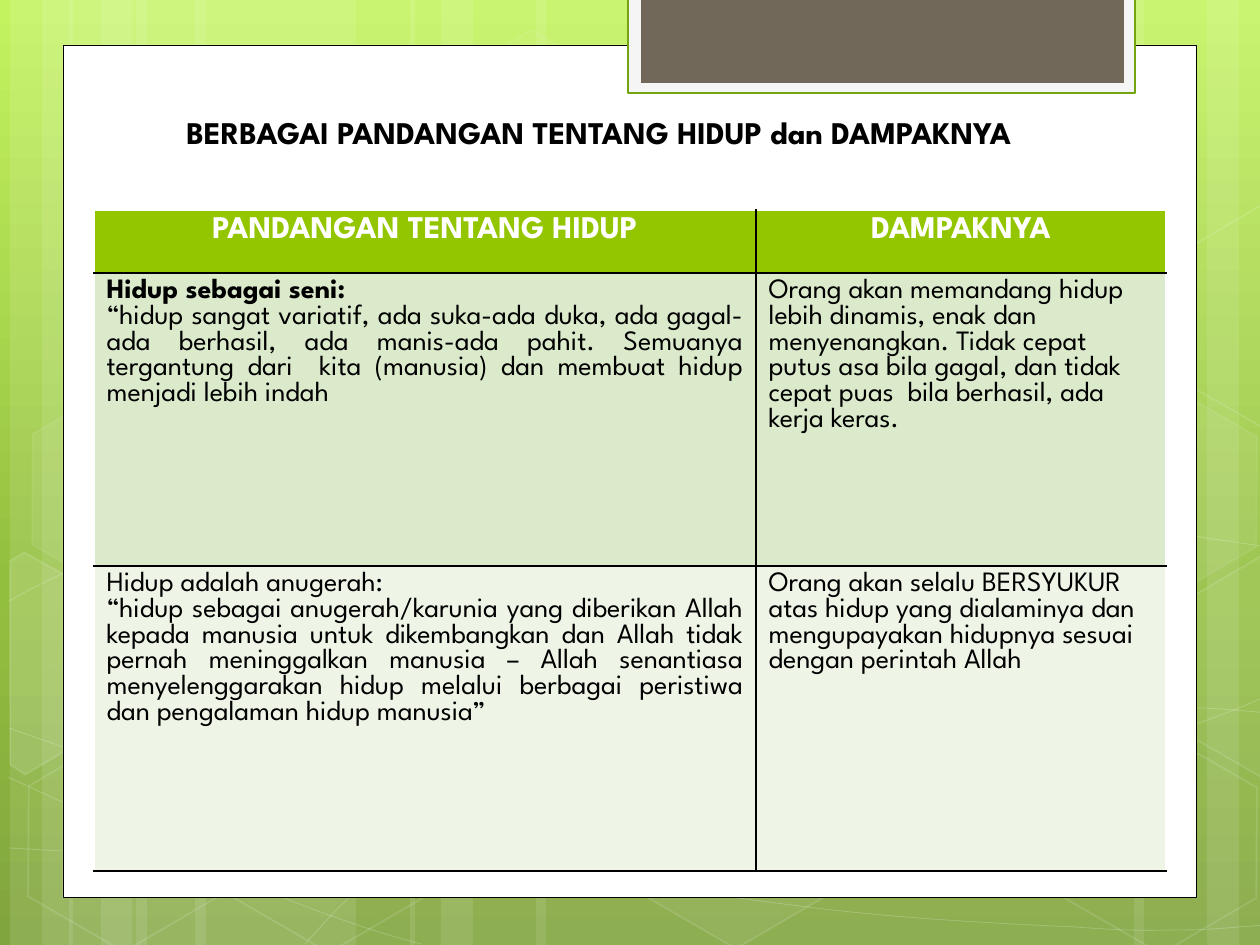
from copy import deepcopy
from math import cos, radians, sin
from pptx import Presentation
from pptx.dml.color import RGBColor
from pptx.enum.shapes import MSO_SHAPE
from pptx.enum.text import PP_ALIGN
from pptx.oxml import parse_xml
from pptx.oxml.ns import nsdecls, qn
from pptx.util import Pt

SCALE = 914400 / 126
FONT = "League Spartan"
TILT = 30
WHITE = RGBColor(0xFF, 0xFF, 0xFF)
BLACK = RGBColor(0, 0, 0)
LIME = RGBColor(0x94, 0xC6, 0x00)
MINT = RGBColor(0xDC, 0xEA, 0xCC)
PALE = RGBColor(0xEE, 0xF5, 0xE7)
SMOKE = RGBColor(0xF5, 0xF5, 0xF5)
OLIVE = RGBColor(0x74, 0xA5, 0x10)
TAUPE = RGBColor(0x71, 0x68, 0x5A)
STOPS = [
    (0, RGBColor(0xC3, 0xF3, 0x5F)),
    (0.62, RGBColor(0x93, 0xBF, 0x3F)),
    (1, RGBColor(0x81, 0xA5, 0x3E)),
]
BARS = [
    (136, 220), (10, 63), (42, 105), (195, 220), (69, 63), (101, 105),
    (924, 220), (1207, 63), (1134, 105), (536, 388), (410, 63), (441, 105),
]
CURVES = [
    [(9, 848), (77, 852), (145, 856), (239, 854), (334, 853), (451, 851), (577, 838),
     (703, 825), (882, 801), (998, 777), (1113, 753), (1231, 716), (1269, 694)],
    [(9, 601), (45, 581), (82, 562), (152, 543), (224, 524), (326, 496), (437, 488),
     (549, 479), (685, 478), (824, 488), (963, 498), (1193, 537), (1269, 547)],
    [(8, 777), (160, 847), (311, 916), (421, 944)],
    [(9, 728), (48, 742), (88, 756), (161, 776), (234, 795), (344, 827), (450, 848),
     (554, 869), (687, 892), (791, 905), (896, 919), (1008, 924), (1075, 927),
     (1140, 932), (1158, 930), (1191, 930), (1223, 929), (1246, 926), (1269, 925)],
    [(305, 944), (328, 919), (350, 893), (381, 871), (411, 848), (454, 823), (489, 805),
     (524, 788), (546, 780), (592, 767), (638, 754), (722, 737), (766, 728),
     (811, 720), (818, 720), (857, 717), (896, 713), (958, 709), (1000, 708),
     (1045, 707), (1116, 708), (1116, 708), (1144, 708), (1173, 708), (1201, 708),
     (1223, 709), (1245, 711), (1256, 712), (1268, 713), (1264, 712), (1268, 713)],
]
HEXES = [
    (421, 45, 4, 8), (626, 742, 6, 12), (14, 745, 0, 12), (18, 393, 7, 8),
    (219, 746, 0, 12), (1051, 747, 0, 12), (1051, 396, 7, 8),
]
SHARDS = [
    ([(10, 561), (24, 552), (121, 607), (120, 718), (25, 774), (10, 765)], (45, 674), 10),
    ([(1167, 611), (1261, 556), (1271, 562), (1271, 772), (1263, 777), (1167, 722)],
     (1241, 655), 4),
    ([(1167, 261), (1261, 205), (1273, 212), (1271, 422), (1263, 427), (1167, 372)],
     (1241, 304), 0),
]
ROWS = [
    [["PANDANGAN TENTANG HIDUP"], ["DAMPAKNYA"]],
    [["Hidup sebagai seni:",
      "“hidup sangat variatif, ada suka-ada duka, ada gagal-ada berhasil, ada manis-ada "
      "pahit. Semuanya tergantung dari  kita (manusia) dan membuat hidup menjadi lebih indah"],
     ["Orang akan memandang hidup lebih dinamis, enak dan menyenangkan. Tidak cepat putus "
      "asa bila gagal, dan tidak cepat puas  bila berhasil, ada kerja keras."]],
    [["Hidup adalah anugerah:",
      "“hidup sebagai anugerah/karunia yang diberikan Allah kepada manusia untuk "
      "dikembangkan dan Allah tidak pernah meninggalkan manusia – Allah senantiasa "
      "menyelenggarakan hidup melalui berbagai peristiwa dan pengalaman hidup manusia”"],
     ["Orang akan selalu BERSYUKUR atas hidup yang dialaminya dan mengupayakan hidupnya "
      "sesuai dengan perintah Allah"]],
]


def px(*nums):
    """Turn pixel lengths into EMU."""
    return [round(num * SCALE) for num in nums]


def fade(fill, shade):
    """Set the opacity of a solid fill element in percent."""
    fill[0].append(parse_xml(f'<a:alpha {nsdecls("a")} val="{shade * 1000}"/>'))


def paint(shape, fill=None, line=None, width=1, shade=100, edge=100):
    """Set fill, line and opacity of a shape."""
    shape.shadow.inherit = False
    props = shape.element.spPr
    if fill is None:
        shape.fill.background()
    else:
        shape.fill.solid()
        shape.fill.fore_color.rgb = fill
        if shade < 100:
            fade(props.find(qn("a:solidFill")), shade)
    if line is None:
        shape.line.fill.background()
    else:
        shape.line.color.rgb = line
        shape.line.width = Pt(width)
        if edge < 100:
            fade(props.find(qn("a:ln")).find(qn("a:solidFill")), edge)


def add_box(shapes, box, kind=MSO_SHAPE.RECTANGLE, **look):
    """Add a painted preset shape."""
    shape = shapes.add_shape(kind, *px(*box))
    paint(shape, **look)
    return shape


def add_path(shapes, points, close, **look):
    """Add a painted outline through the points."""
    pen = shapes.build_freeform(*points[0], scale=SCALE)
    pen.add_line_segments(points[1:], close=close)
    shape = pen.convert_to_shape()
    paint(shape, **look)
    return shape


def add_curve(shapes, knots):
    """Add a faint line of cubic curves."""
    shape = add_path(shapes, knots, False, line=WHITE, width=0.5, edge=20)
    legs = list(shape.element.iter(qn("a:lnTo")))
    for start in range(0, len(legs), 3):
        bend = parse_xml(f'<a:cubicBezTo {nsdecls("a")}/>')
        legs[start].addprevious(bend)
        for leg in legs[start:start + 3]:
            bend.append(leg[0])
            leg.getparent().remove(leg)


def add_shard(shapes, points, hub, shade):
    """Add a cut hexagon that is tilted about its hub."""
    c, s = cos(radians(TILT)), sin(radians(TILT))
    flat = [(hub[0] + (x - hub[0]) * c + (y - hub[1]) * s,
             hub[1] - (x - hub[0]) * s + (y - hub[1]) * c) for x, y in points]
    shape = add_path(shapes, flat, True, fill=WHITE if shade else None, shade=shade,
                     line=WHITE, edge=12)
    shape.rotation = TILT


def set_ground(slide):
    """Fill the background with the green gradient."""
    fill = slide.background.fill
    fill.gradient()
    fill.gradient_angle = 270
    stops = next(slide.element.iter(qn("a:gsLst")))
    stops.append(deepcopy(stops[0]))
    for stop, (place, color) in zip(fill.gradient_stops, STOPS):
        stop.position = place
        stop.color.rgb = color


def add_decor(shapes):
    """Draw the bars, curves and hexagons."""
    for left, width in BARS:
        add_box(shapes, (left, 0, width, 945), fill=WHITE, shade=10)
    for knots in CURVES:
        add_curve(shapes, knots)
    for left, top, shade, edge in HEXES:
        hexa = add_box(shapes, (left, top, 220, 192), MSO_SHAPE.HEXAGON,
                       fill=WHITE if shade else None, shade=shade, line=WHITE, edge=edge)
        hexa.adjustments[0] = 0.285
        hexa.rotation = TILT
    for shard in SHARDS:
        add_shard(shapes, *shard)


def write(frame, lines, size, color, align, bold=0):
    """Write the lines as paragraphs, the first few in bold."""
    for index, line in enumerate(lines):
        para = frame.add_paragraph() if index else frame.paragraphs[0]
        para.text = line
        para.alignment = align
        font = para.font
        font.name, font.size, font.bold = FONT, Pt(size), index < bold
        font.color.rgb = color


def add_edges(cell, row, col):
    """Draw black inner and bottom borders and white outer ones."""
    colors = {"L": BLACK if col else WHITE, "R": WHITE if col else BLACK,
              "T": BLACK if row else WHITE, "B": BLACK}
    props = cell._tc.get_or_add_tcPr()
    for index, (side, color) in enumerate(colors.items()):
        props.insert(index, parse_xml(
            f'<a:ln{side} {nsdecls("a")} w="12700"><a:solidFill>'
            f'<a:srgbClr val="{color}"/></a:solidFill></a:ln{side}>'))


def add_grid(shapes):
    """Add the table of views and effects."""
    grid = shapes.add_table(3, 2, *px(94, 210, 1072, 661)).table
    grid.first_row = grid.horz_banding = False
    for col, width in zip(grid.columns, px(662, 410)):
        col.width = width
    for row, height in zip(grid.rows, px(63, 293, 305)):
        row.height = height
    for r, (row, tint) in enumerate(zip(ROWS, (LIME, MINT, PALE))):
        for c, lines in enumerate(row):
            cell = grid.cell(r, c)
            cell.fill.solid()
            cell.fill.fore_color.rgb = tint
            add_edges(cell, r, c)
            if r == 0:
                write(cell.text_frame, lines, 18, WHITE, PP_ALIGN.CENTER, 1)
            else:
                align = PP_ALIGN.LEFT if c else PP_ALIGN.JUSTIFY
                write(cell.text_frame, lines, 16, BLACK, align, int((r, c) == (1, 0)))


def main():
    """Build the slide and save it."""
    deck = Presentation()
    deck.slide_width, deck.slide_height = px(1260, 945)
    slide = deck.slides.add_slide(deck.slide_layouts[6])
    shapes = slide.shapes
    set_ground(slide)
    add_decor(shapes.add_group_shape().shapes)
    add_box(shapes, (63, 45, 1134, 853), fill=WHITE, line=BLACK, width=0.5)
    add_box(shapes, (628, -3, 507, 96), fill=SMOKE, line=OLIVE, width=1.25)
    add_box(shapes, (641, -3, 483, 86), fill=TAUPE)
    title = shapes.add_textbox(*px(74, 107, 1050, 50)).text_frame
    title.word_wrap = True
    write(title, ["BERBAGAI PANDANGAN TENTANG HIDUP dan DAMPAKNYA"], 18, BLACK,
          PP_ALIGN.CENTER, 1)
    add_grid(shapes)
    deck.save("out.pptx")


if __name__ == "__main__":
    main()
